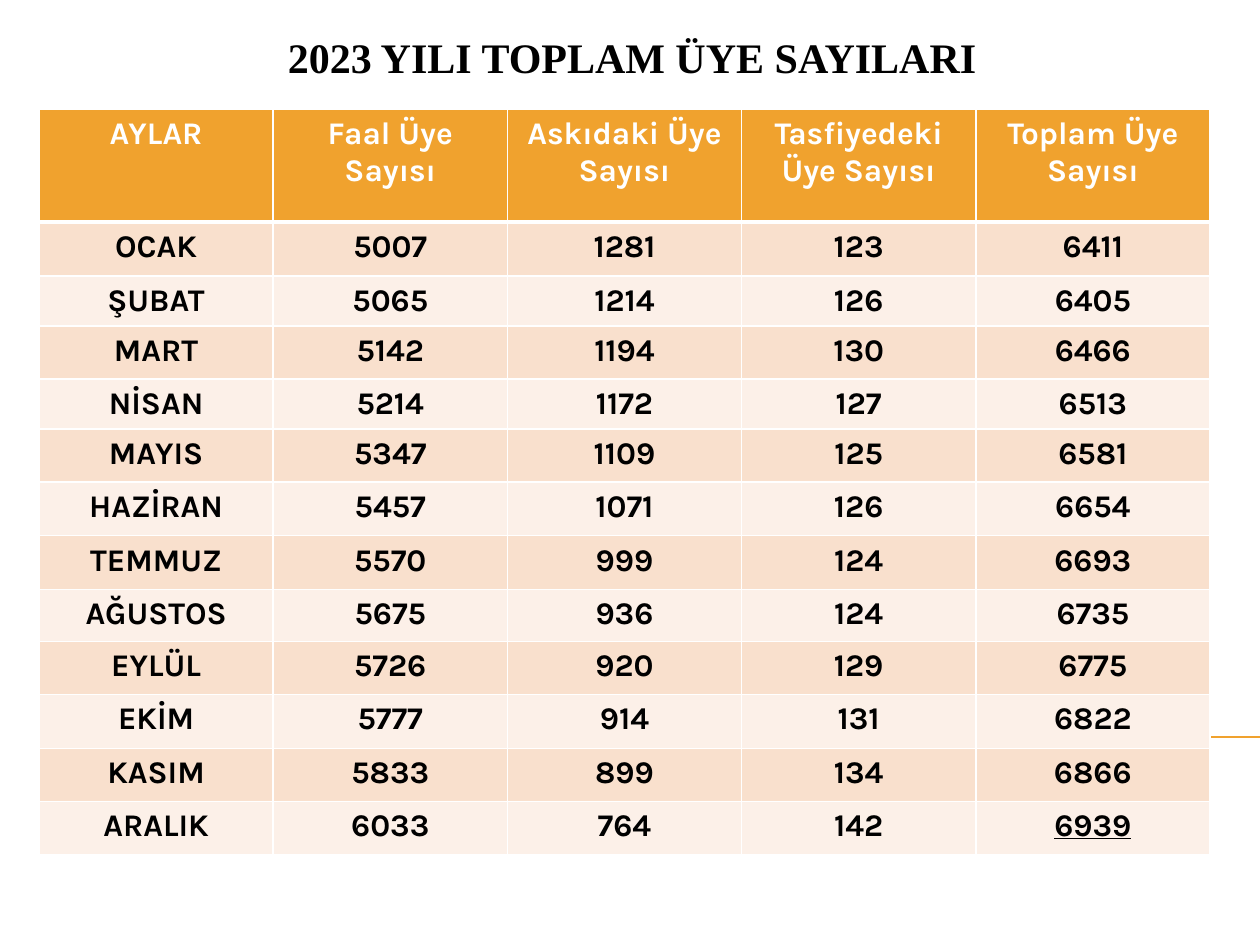
from dataclasses import dataclass

from lxml.etree import SubElement
from pptx import Presentation
from pptx.dml.color import RGBColor
from pptx.enum.shapes import MSO_CONNECTOR as Connector
from pptx.enum.text import MSO_ANCHOR as Anchor, MSO_AUTO_SIZE as AutoSize, PP_ALIGN as Align
from pptx.oxml.ns import qn
from pptx.util import Pt

EMU_PER_PX = 914400 / 126


@dataclass(frozen=True)
class Theme:
    accent: str = "F0A22E"
    band_dark: str = "F9E0CD"
    band_light: str = "FCF0E8"
    white: str = "FFFFFF"
    black: str = "000000"
    title_font: str = "Times New Roman"
    table_font: str = "Karla"
    title_size: int = 24
    table_size: int = 18
    rule_width: float = 0.75
    border_width: int = 1
    header_border_width: int = 3


THEME = Theme()

TITLE = "2023 YILI TOPLAM ÜYE SAYILARI"
HEADERS = ["AYLAR", "Faal Üye Sayısı", "Askıdaki Üye Sayısı",
           "Tasfiyedeki Üye Sayısı", "Toplam Üye Sayısı"]
MEMBERS = [
    ("OCAK", 5007, 1281, 123, 6411),
    ("ŞUBAT", 5065, 1214, 126, 6405),
    ("MART", 5142, 1194, 130, 6466),
    ("NİSAN", 5214, 1172, 127, 6513),
    ("MAYIS", 5347, 1109, 125, 6581),
    ("HAZİRAN", 5457, 1071, 126, 6654),
    ("TEMMUZ", 5570, 999, 124, 6693),
    ("AĞUSTOS", 5675, 936, 124, 6735),
    ("EYLÜL", 5726, 920, 129, 6775),
    ("EKİM", 5777, 914, 131, 6822),
    ("KASIM", 5833, 899, 134, 6866),
    ("ARALIK", 6033, 764, 142, 6939),
]
ROW_HEIGHTS = [113, 54, 50, 53, 50, 53, 54, 54, 52, 53, 54, 53, 53]


def px(length):
    return round(length * EMU_PER_PX)


def color(value):
    return RGBColor.from_string(value)


def format_text(text_frame, font_name, size, text_color):
    """Centre the paragraphs and make their runs bold in the given font."""
    for paragraph in text_frame.paragraphs:
        paragraph.alignment = Align.CENTER
        for run in paragraph.runs:
            run.font.name = font_name
            run.font.size = Pt(size)
            run.font.bold = True
            run.font.color.rgb = color(text_color)


def add_rule(slide, left, top, width):
    rule = slide.shapes.add_connector(
        Connector.STRAIGHT, px(left), px(top), px(left + width), px(top))
    rule.line.color.rgb = color(THEME.accent)
    rule.line.width = Pt(THEME.rule_width)
    SubElement(rule._element.spPr, qn("a:effectLst"))


def place_title(slide, left, top, width, height):
    title = slide.shapes.title
    title.left, title.top, title.width, title.height = map(px, (left, top, width, height))
    text_frame = title.text_frame
    text_frame.text = TITLE
    text_frame.auto_size = AutoSize.NONE
    text_frame.vertical_anchor = Anchor.BOTTOM
    format_text(text_frame, THEME.title_font, THEME.title_size, THEME.black)


def set_borders(cell, top_width, bottom_width):
    """Draw white cell borders; they must come before the fill in the XML."""
    side = THEME.border_width
    properties = cell._tc.get_or_add_tcPr()
    widths = {"a:lnL": side, "a:lnR": side, "a:lnT": top_width, "a:lnB": bottom_width}
    for tag, width in widths.items():
        border = SubElement(properties, qn(tag), w=str(Pt(width)))
        fill = SubElement(border, qn("a:solidFill"))
        SubElement(fill, qn("a:srgbClr"), val=THEME.white)


def row_style(row):
    """Return fill, text colour, top border and bottom border of a row."""
    thin, thick = THEME.border_width, THEME.header_border_width
    if row == 0:
        return THEME.accent, THEME.white, thin, thick
    fill = THEME.band_dark if row % 2 else THEME.band_light
    return fill, THEME.black, thick if row == 1 else thin, thin


def add_member_table(slide, left, top, width):
    rows = [HEADERS, *MEMBERS]
    table = slide.shapes.add_table(
        len(rows), len(HEADERS), px(left), px(top), px(width), px(sum(ROW_HEIGHTS))).table
    for column in table.columns:
        column.width = px(width / len(HEADERS))
    for row, values in enumerate(rows):
        table.rows[row].height = px(ROW_HEIGHTS[row])
        fill, text_color, top_width, bottom_width = row_style(row)
        for column, value in enumerate(values):
            cell = table.cell(row, column)
            cell.text_frame.text = str(value)
            format_text(cell.text_frame, THEME.table_font, THEME.table_size, text_color)
            set_borders(cell, top_width, bottom_width)
            cell.fill.solid()
            cell.fill.fore_color.rgb = color(fill)
    year_total = table.cell(len(rows) - 1, len(HEADERS) - 1)
    year_total.text_frame.paragraphs[0].runs[0].font.underline = True


def main():
    presentation = Presentation()
    presentation.slide_width, presentation.slide_height = px(1260), px(945)
    title_only = presentation.slide_layouts[5]
    slide = presentation.slides.add_slide(title_only)
    add_rule(slide, 71, 737, 1189)
    place_title(slide, 49, 29, 1166, 59)
    add_member_table(slide, 39, 109, 1171)
    presentation.save("out.pptx")


if __name__ == "__main__":
    main()
